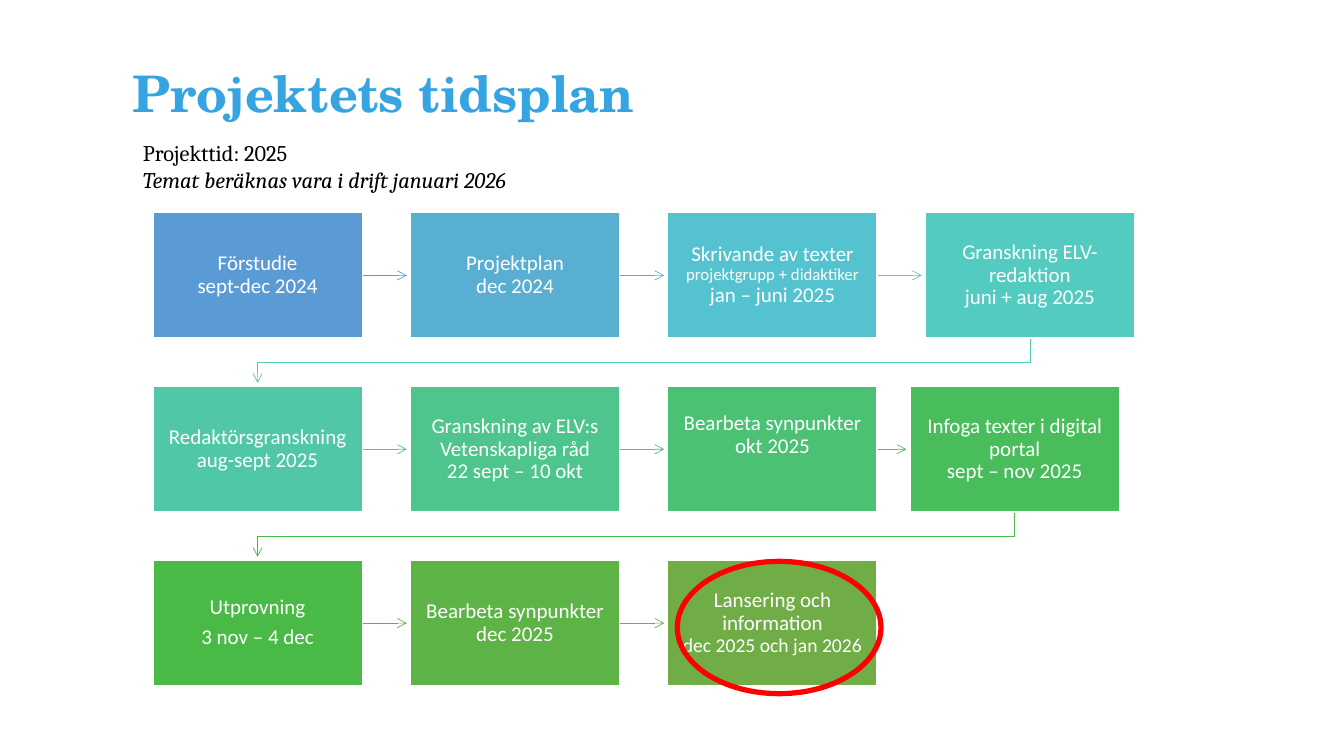
"""Build the project timeline slide."""
from lxml.etree import SubElement
from pptx import Presentation
from pptx.dml.color import RGBColor
from pptx.enum.shapes import MSO_CONNECTOR, MSO_SHAPE
from pptx.enum.text import MSO_ANCHOR, PP_ALIGN
from pptx.oxml.ns import qn
from pptx.util import Pt


def color(part, code):
    if hasattr(part, "solid"):
        part.solid()
        part.fore_color.rgb = RGBColor.from_string(code)
    else:
        part.color.rgb = RGBColor.from_string(code)


def write(para, lines, **style):
    for num, (text, extra) in enumerate(lines):
        look = {**style, **extra}
        if num:
            para.add_line_break()
            SubElement(para._p[-1], qn("a:rPr"), sz=str(int(look["size"].pt * 100)))
        run = para.add_run()
        run.text = text
        for key, value in look.items():
            if key == "code":
                color(run.font, value)
            else:
                setattr(run.font, key, value)


deck = Presentation()
deck.slide_width, deck.slide_height = Pt(960), Pt(540)
slide = deck.slides.add_slide(deck.slide_layouts[6])
shapes = slide.shapes

title = shapes.add_textbox(Pt(87.3), Pt(12.4), Pt(628), Pt(112.3)).text_frame
title.word_wrap = True
title.vertical_anchor = MSO_ANCHOR.MIDDLE
title.paragraphs[0].line_spacing = 0.9
write(title.paragraphs[0], [("Projektets tidsplan", {})],
      size=Pt(36), name="TeX Gyre Schola", bold=True, code="36A4E1")

left, top, wide, high = 109.2, 151.8, 149.6, 89.8
step_x, step_y, gap = 183.9, 124.2, 2.5
small = {"size": Pt(12)}
steps = [
    ("5B9BD5", "5B9BD5", [["Förstudie", "sept-dec 2024"]]),
    ("58AFD2", "58B1D2", [["Projektplan", "dec 2024"]]),
    ("55C3CF", "55C7CE", [["Skrivande av texter", ("projektgrupp + didaktiker", small),
                           "jan – juni 2025"]]),
    ("53CBC1", "52CAB8", [["Granskning ELV-redaktion", "juni + aug 2025"]]),
    ("50C8A7", "4FC79C", [["Redaktörsgranskning", "aug-sept 2025"]]),
    ("4DC58D", "4CC37F", [["Granskning av ELV:s Vetenskapliga råd", "22 sept – 10 okt"]]),
    ("4BC174", "49BF64", [["Bearbeta synpunkter", "okt 2025"]]),
    ("49BD5B", "47BA49", [["Infoga texter i digital portal", "sept – nov 2025"]]),
    ("4ABA46", "5CB447", [["Utprovning"], ["3 nov – 4 dec"]]),
    ("5EB347", "70AD47", [["Bearbeta synpunkter", "dec 2025"]]),
    ("70AD47", None, [["Lansering och information",
                       ("dec 2025 och jan 2026", {"size": Pt(14)})]]),
]
spots = [(left + num % 4 * step_x, top + num // 4 * step_y) for num in range(len(steps))]
spots[7] = (650, spots[7][1])

for num, (fill, tint, paras) in enumerate(steps):
    x, y = spots[num]
    if tint:
        to_x, to_y = spots[num + 1]
        if to_y == y:
            mid = Pt(y + high / 2)
            arrow = shapes.add_connector(MSO_CONNECTOR.STRAIGHT, Pt(x + wide), mid,
                                         Pt(to_x - gap), mid)
        else:
            turn, end = y + high + 17.2, to_x + wide / 2
            pen = shapes.build_freeform(Pt(x + wide / 2), Pt(y + high))
            pen.add_line_segments([(Pt(x + wide / 2), Pt(turn)), (Pt(end), Pt(turn)),
                                   (Pt(end), Pt(to_y - gap))], close=False)
            arrow = pen.convert_to_shape()
            arrow.fill.background()
        color(arrow.line, tint)
        arrow.line.width = Pt(0.5)
        props = arrow.element.spPr
        SubElement(props.find(qn("a:ln")), qn("a:tailEnd"), type="arrow")
        SubElement(props, qn("a:effectLst"))

    box = shapes.add_shape(MSO_SHAPE.RECTANGLE, Pt(x), Pt(y), Pt(wide), Pt(high))
    box.shadow.inherit = False
    color(box.fill, fill)
    color(box.line, "FFFFFF")
    box.line.width = Pt(1)
    frame = box.text_frame
    frame.word_wrap = True
    frame.vertical_anchor = MSO_ANCHOR.MIDDLE
    for side in ("left", "top", "right", "bottom"):
        setattr(frame, f"margin_{side}", Pt(8.4))
    if num == 6:
        frame.margin_bottom = Pt(28)
    for row, lines in enumerate(paras):
        para = frame.add_paragraph() if row else frame.paragraphs[0]
        for key, value in {"alignment": PP_ALIGN.CENTER, "line_spacing": 0.9,
                           "space_before": Pt(5.25 if row else 0)}.items():
            setattr(para, key, value)
        write(para, [(line, {}) if isinstance(line, str) else line for line in lines],
              size=Pt(15), name="Calibri", code="FFFFFF")

ring = shapes.add_shape(MSO_SHAPE.OVAL, Pt(483.8), Pt(401), Pt(145.5), Pt(94.5))
ring.shadow.inherit = False
ring.fill.background()
color(ring.line, "FF0000")
ring.line.width = Pt(3.75)

note = shapes.add_textbox(Pt(95), Pt(95.8), Pt(480), Pt(46)).text_frame
note.word_wrap = True
write(note.paragraphs[0], [("Projekttid: 2025", {}),
                           ("Temat beräknas vara i drift januari 2026", {"italic": True})],
      size=Pt(16), name="Cambria", code="000000")

deck.save("out.pptx")
